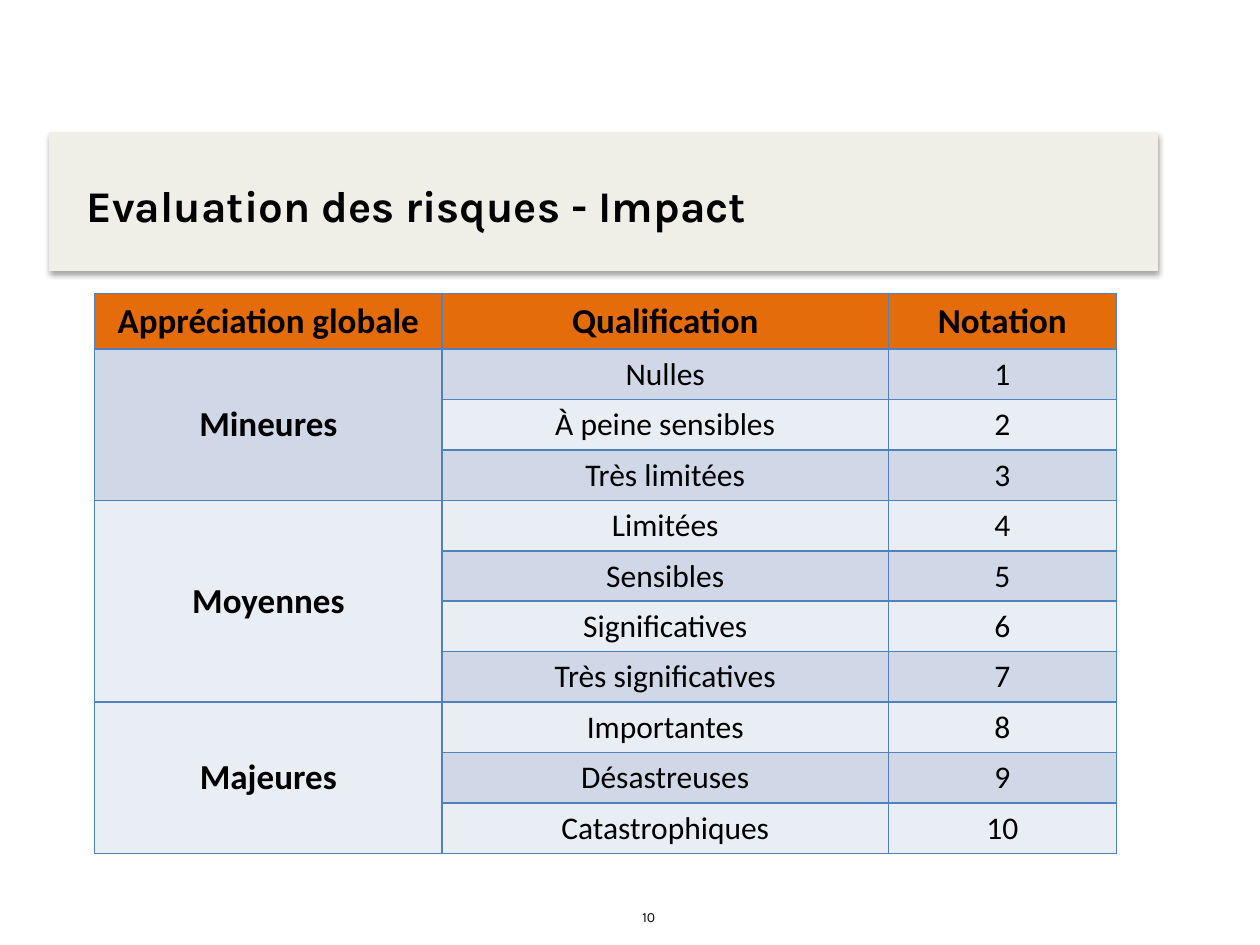
from lxml.etree import SubElement
from pptx import Presentation
from pptx.dml.color import RGBColor
from pptx.enum.shapes import MSO_SHAPE
from pptx.enum.text import MSO_ANCHOR, PP_ALIGN
from pptx.oxml.ns import qn
from pptx.util import Inches, Pt

# Content
TITLE = "Evaluation des risques - Impact"
PAGE = "10"
HEADERS = ["Appréciation globale", "Qualification", "Notation"]
GROUPS = [
    ("Mineures", ["Nulles", "À peine sensibles", "Très limitées"]),
    ("Moyennes", ["Limitées", "Sensibles", "Significatives", "Très significatives"]),
    ("Majeures", ["Importantes", "Désastreuses", "Catastrophiques"]),
]

THEME = {
    "title_font": "Karla", "table_font": "Calibri",
    "title": 25, "head": 20, "body": 18, "page": 8,
    "text": "000000", "banner": "EFEEE7", "header": "E46C0A",
    "bands": ["E9EDF4", "D0D8E8"], "border": "4F81BD",
}

# Layout, in inches
BANNER = (0.39, 1.05, 8.8, 1.1)
TITLE_BOX = (0.59, 1.23, 8.43, 0.79)
PAGE_BOX = (5, 7.16, 3.27, 0.24)
TABLE_LEFT, TABLE_TOP = 0.75, 2.33
COLS = [2.76, 3.54, 1.81]
HEAD_H, ROW_H = 0.44, 0.4


def inches(box):
    return [Inches(v) for v in box]


def add_run(p, text, font, size, bold=False):
    r = p.add_run()
    r.text = text
    r.font.name, r.font.size, r.font.bold = font, Pt(size), bold
    r.font.color.rgb = RGBColor.from_string(THEME["text"])


def add_text(slide, box, text, size, bold=False, anchor=MSO_ANCHOR.TOP):
    tf = slide.shapes.add_textbox(*inches(box)).text_frame
    tf.word_wrap = True
    tf.vertical_anchor = anchor
    add_run(tf.paragraphs[0], text, THEME["title_font"], size, bold)


def add_shadow(sp):
    sp.shadow.inherit = False
    effects = sp._element.spPr.find(qn("a:effectLst"))
    shadow = SubElement(effects, qn("a:outerShdw"), blurRad=str(Pt(3.1)),
                        dist=str(Pt(1.8)), dir="5400000", rotWithShape="0")
    color = SubElement(shadow, qn("a:srgbClr"), val="000000")
    SubElement(color, qn("a:alpha"), val="35000")


def style_cell(cell, fill):
    tcPr = cell._tc.get_or_add_tcPr()
    for side in ("lnL", "lnR", "lnT", "lnB"):
        ln = SubElement(tcPr, qn(f"a:{side}"), w=str(Pt(1)))
        SubElement(SubElement(ln, qn("a:solidFill")), qn("a:srgbClr"), val=THEME["border"])
    cell.fill.solid()
    cell.fill.fore_color.rgb = RGBColor.from_string(fill)


def write_cell(cell, text, strong=False):
    p = cell.text_frame.paragraphs[0]
    p.alignment = PP_ALIGN.CENTER
    add_run(p, text, THEME["table_font"], THEME["head" if strong else "body"], strong)


def add_rating_table(slide):
    count = sum(len(levels) for _, levels in GROUPS)
    box = (TABLE_LEFT, TABLE_TOP, sum(COLS), HEAD_H + count * ROW_H)
    table = slide.shapes.add_table(count + 1, len(COLS), *inches(box)).table
    for col, width in zip(table.columns, COLS):
        col.width = Inches(width)
    for i, row in enumerate(table.rows):
        row.height = Inches(ROW_H if i else HEAD_H)
        for cell in row.cells:
            style_cell(cell, THEME["bands"][i % 2] if i else THEME["header"])

    for c, text in enumerate(HEADERS):
        write_cell(table.cell(0, c), text, strong=True)
    table.cell(0, 0).vertical_anchor = MSO_ANCHOR.MIDDLE

    # Each group spans its levels; the ratings run on from group to group
    first = 1
    for name, levels in GROUPS:
        group = table.cell(first, 0)
        group.merge(table.cell(first + len(levels) - 1, 0))
        group.vertical_anchor = MSO_ANCHOR.MIDDLE
        write_cell(group, name, strong=True)
        for rating, level in enumerate(levels, first):
            write_cell(table.cell(rating, 1), level)
            write_cell(table.cell(rating, 2), str(rating))
        first += len(levels)


def main():
    prs = Presentation()
    prs.slide_width, prs.slide_height = Inches(10), Inches(7.5)
    s = prs.slides.add_slide(prs.slide_layouts[6])

    # Title banner
    sp = s.shapes.add_shape(MSO_SHAPE.RECTANGLE, *inches(BANNER))
    sp.fill.solid()
    sp.fill.fore_color.rgb = RGBColor.from_string(THEME["banner"])
    sp.line.fill.background()
    add_shadow(sp)
    add_text(s, TITLE_BOX, TITLE, THEME["title"], True, MSO_ANCHOR.MIDDLE)

    # Ratings and page number
    add_rating_table(s)
    add_text(s, PAGE_BOX, PAGE, THEME["page"])
    prs.save("out.pptx")


if __name__ == "__main__":
    main()
